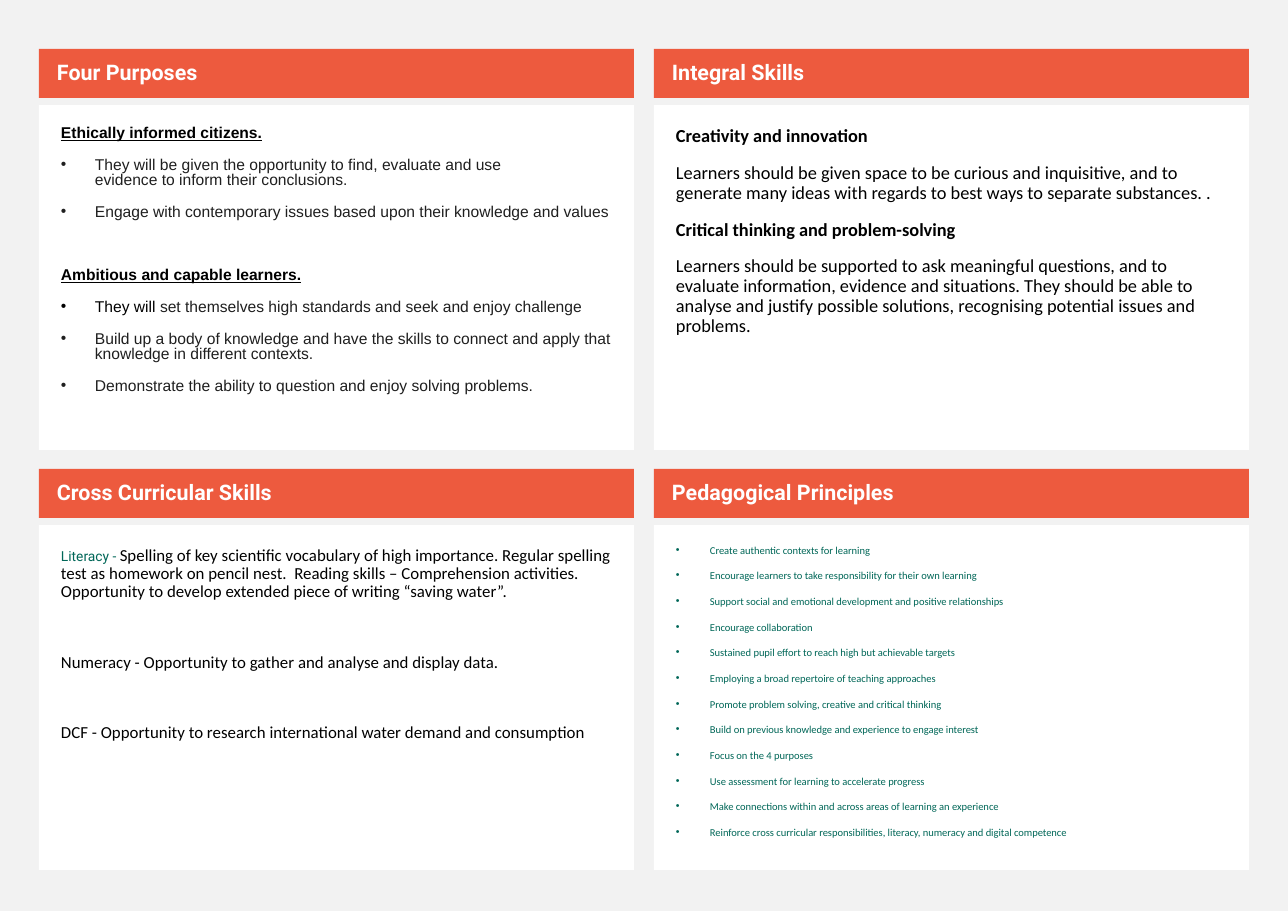
from lxml.etree import SubElement
from pptx import Presentation
from pptx.dml.color import RGBColor
from pptx.enum.shapes import MSO_SHAPE
from pptx.enum.text import MSO_ANCHOR, PP_ALIGN
from pptx.oxml.ns import qn
from pptx.util import Pt

PX = 8299
PAGE_SIZE = (1288, 911)
GREY, ORANGE, WHITE = "F2F2F2", "ED5A3E", "FFFFFF"
HARD_SPACE = chr(160)

# style: font, size, colour, bold, underline, line spacing, bullet
STYLES = {
    "title": ("Roboto", 14, WHITE, True, False, 0.9, False),
    "purpose": ("Arial", 10.2, "000000", True, True, 0.8, False),
    "outcome": ("Arial", 10.2, "1F1F1F", False, False, 0.8, True),
    "outcome lead": ("Arial", 10.2, "000000", False, False, 0.8, True),
    "skill": ("Calibri", 12, "000000", True, False, 0.9, False),
    "skill text": ("Calibri", 12, "000000", False, False, 0.9, False),
    "literacy": ("Roboto", 9, "006758", False, False, 0.9, False),
    "cross": ("Calibri", 11, "000000", False, False, 0.9, False),
    "principle": ("Calibri", 6.9, "006758", False, False, 0.7, True),
}
GAP, PURPOSE_GAP, CROSS_GAP = 11, 31.4, 34

PRINCIPLES = [
    "Create authentic contexts for learning",
    "Encourage learners to take responsibility for their own learning",
    "Support social and emotional development and positive relationships",
    "Encourage collaboration",
    "Sustained pupil effort to reach high but achievable targets",
    "Employing a broad repertoire of teaching approaches",
    "Promote problem solving, creative and critical thinking",
    "Build on previous knowledge and experience to engage interest",
    "Focus on the 4 purposes",
    "Use assessment for learning to accelerate progress",
    "Make connections within and across areas of learning an experience",
    "Reinforce cross curricular responsibilities, literacy, numeracy and digital competence",
]

# panel: title, paragraphs of (space before, [(style, text), ...])
PANELS = [
    ("Four Purposes", [
        (GAP, [("purpose", "Ethically informed citizens.")]),
        (GAP, [("outcome", "They will be given the opportunity to find, evaluate and use "
                           f"evidence{HARD_SPACE}to{HARD_SPACE}inform their conclusions.")]),
        (GAP, [("outcome", "Engage with contemporary issues based upon their knowledge and values")]),
        (PURPOSE_GAP, [("purpose", "Ambitious and capable learners.")]),
        (GAP, [("outcome lead", "They will "),
               ("outcome", "set themselves high standards and seek and enjoy challenge")]),
        (GAP, [("outcome", "Build up a body of knowledge and have the skills to connect and "
                           "apply that knowledge in different contexts.")]),
        (GAP, [("outcome", "Demonstrate the ability to question and enjoy solving problems.")]),
    ]),
    ("Integral Skills", [
        (GAP, [("skill", "Creativity and innovation")]),
        (GAP, [("skill text", "Learners should be given space to be curious and inquisitive, and to "
                              "generate many ideas with regards to best ways to separate substances. .")]),
        (GAP, [("skill", "Critical thinking and problem-solving")]),
        (GAP, [("skill text", "Learners should be supported to ask meaningful questions, and to "
                              "evaluate information, evidence and situations. They should be able to "
                              "analyse and justify possible solutions, recognising potential issues "
                              "and problems.")]),
    ]),
    ("Cross Curricular Skills", [
        (GAP, [("literacy", "Literacy - "),
               ("cross", "Spelling of key scientific vocabulary of high importance. Regular spelling "
                         f"test as homework on pencil nest.{HARD_SPACE} Reading skills – Comprehension "
                         "activities. Opportunity to develop extended piece of writing “saving water”.")]),
        (CROSS_GAP, [("cross", "Numeracy - Opportunity to gather and analyse and display data.")]),
        (CROSS_GAP, [("cross", "DCF - Opportunity to research international water demand and consumption")]),
    ]),
    ("Pedagogical Principles", [(GAP, [("principle", text)]) for text in PRINCIPLES]),
]

LEFT, TOP, WIDTH = 39, 49, 595
COLUMN_STEP, ROW_STEP = 615, 420
HEADER_HEIGHT, BODY_OFFSET, BODY_HEIGHT = 49, 56, 345
HEADER_INSETS, BODY_INSETS = (18, 6, 11, 6), (22, 22, 22, 22)
BULLET_INDENT = 34


def paint(fill, colour):
    """Give a fill one solid colour."""
    fill.solid()
    fill.fore_color.rgb = RGBColor.from_string(colour)


def set_font(font, style):
    """Apply the character part of a named style."""
    font.name, size, colour, font.bold, font.underline = STYLES[style][:5]
    font.size = Pt(size)
    paint(font.fill, colour)


def add_bullet(para):
    """Give a paragraph a hanging round bullet."""
    properties = para._p.get_or_add_pPr()
    properties.set("marL", str(BULLET_INDENT * PX))
    properties.set("indent", str(-BULLET_INDENT * PX))
    SubElement(properties, qn("a:buFont")).set("typeface", "Arial")
    SubElement(properties, qn("a:buChar")).set("char", "•")


def write_paragraph(para, before, spans):
    """Fill one paragraph with its styled spans."""
    line_spacing, bulleted = STYLES[spans[0][0]][5:]
    para.alignment = PP_ALIGN.LEFT
    para.line_spacing = line_spacing
    para.space_before = Pt(before)
    if bulleted:
        add_bullet(para)
    for style, text in spans:
        span = para.add_run()
        span.text = text
        set_font(para.font if len(spans) == 1 else span.font, style)


def add_block(page, bounds, colour, insets, anchor, paragraphs):
    """Add a plain filled rectangle holding the paragraphs."""
    box = page.shapes.add_shape(MSO_SHAPE.RECTANGLE, *(length * PX for length in bounds))
    box.shadow.inherit = False
    paint(box.fill, colour)
    box.line.fill.background()
    frame = box.text_frame
    frame.word_wrap = True
    frame.vertical_anchor = anchor
    frame.margin_left, frame.margin_top, frame.margin_right, frame.margin_bottom = (
        inset * PX for inset in insets)
    for index, (before, spans) in enumerate(paragraphs):
        para = frame.add_paragraph() if index else frame.paragraphs[0]
        write_paragraph(para, before, spans)


def main():
    """Build the page of four titled panels."""
    deck = Presentation()
    deck.slide_width, deck.slide_height = (length * PX for length in PAGE_SIZE)
    page = deck.slides.add_slide(deck.slide_layouts[6])
    paint(page.background.fill, GREY)
    for index, (title, paragraphs) in enumerate(PANELS):
        row, column = divmod(index, 2)
        left, top = LEFT + column * COLUMN_STEP, TOP + row * ROW_STEP
        add_block(page, (left, top, WIDTH, HEADER_HEIGHT), ORANGE, HEADER_INSETS,
                  MSO_ANCHOR.MIDDLE, [(GAP, [("title", title)])])
        add_block(page, (left, top + BODY_OFFSET, WIDTH, BODY_HEIGHT), WHITE, BODY_INSETS,
                  MSO_ANCHOR.TOP, paragraphs)
    deck.save("out.pptx")


if __name__ == "__main__":
    main()
